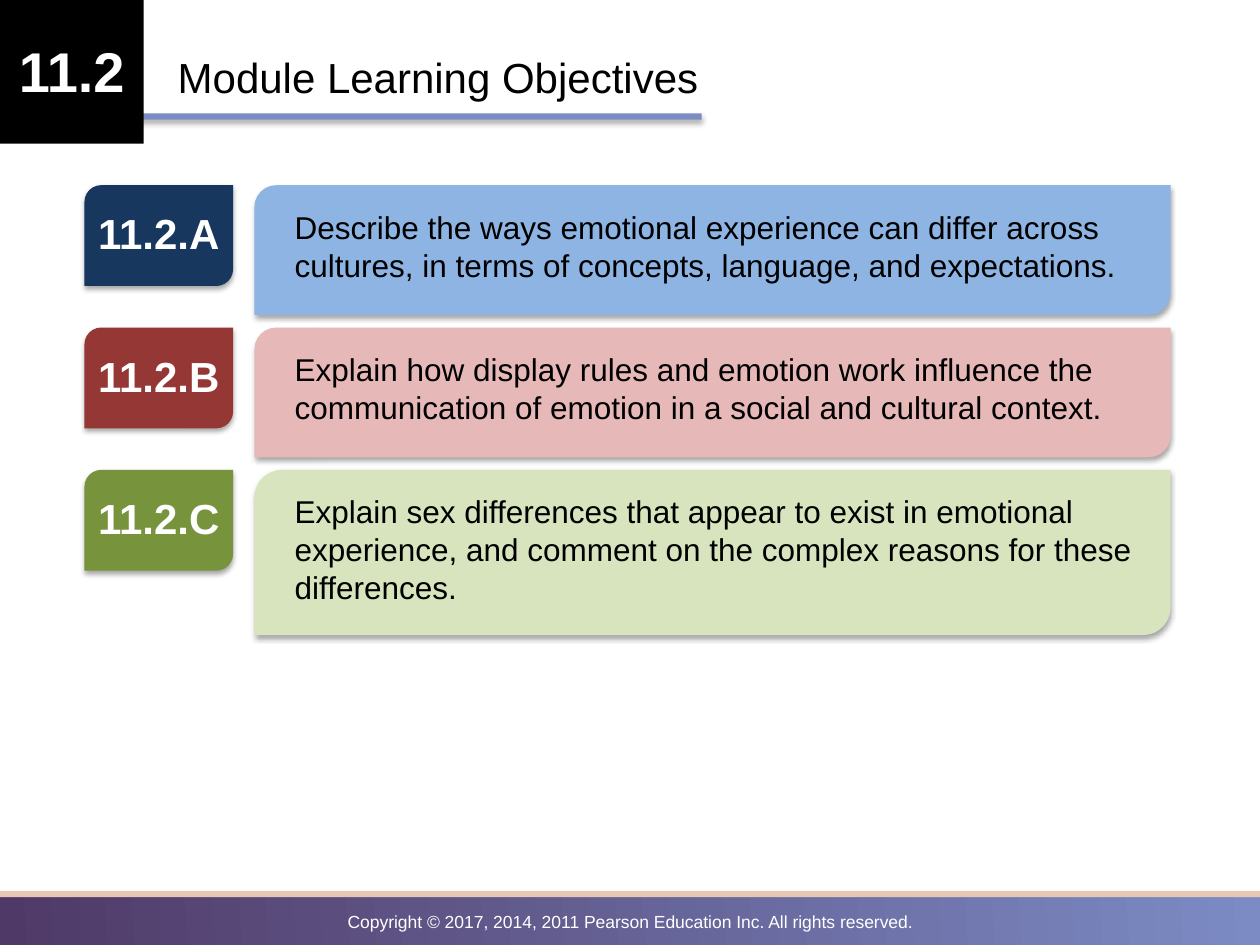
import pptx
import pptx.util
import pptx.dml.color
import pptx.enum.shapes
import pptx.enum.text
import pptx.oxml

Inches = pptx.util.Inches
SHAPE = pptx.enum.shapes.MSO_SHAPE
ALIGN = pptx.enum.text.PP_ALIGN
ANCHOR = pptx.enum.text.MSO_ANCHOR

# Content
MODULE = "11.2"
TITLE = "Module Learning Objectives"
COPYRIGHT = "Copyright © 2017, 2014, 2011 Pearson Education Inc. All rights reserved."
# label, objective, badge colour, card colour, card height
OBJECTIVES = [
    ("11.2.A", "Describe the ways emotional experience can differ across cultures, "
     "in terms of concepts, language, and expectations.", "17375E", "8EB4E3", 1.03),
    ("11.2.B", "Explain how display rules and emotion work influence the "
     "communication of emotion in a social and cultural context.", "953735", "E6B9B8", 1.03),
    ("11.2.C", "Explain sex differences that appear to exist in emotional experience, "
     "and comment on the complex reasons for these differences.", "77933C", "D7E4BD", 1.31),
]

THEME = {
    "font": "Arial",
    "module": 32, "title": 24, "label": 24, "objective": 18, "copyright": 10,
    "dark": "000000", "light": "FFFFFF",
    "accent": "7C8BC4", "footer": "4F3967", "footer_edge": "E7C8B3",
}

# Layout
SLIDE_W, SLIDE_H = 10, 7.5
MODULE_SIDE = 1.14
FIRST_TOP, ROW_GAP, TEXT_DROP = 1.47, 0.1, 0.13
BADGE_LEFT, BADGE_W, BADGE_H = 0.67, 1.18, 0.8
CARD_LEFT, CARD_W = 2.02, 7.27
OBJECTIVE_LEFT, OBJECTIVE_W = 2.24, 6.99
FOOTER_TOP = 7.08

SHADOW = (
    '<a:effectLst xmlns:a="http://schemas.openxmlformats.org/drawingml/2006/main">'
    '<a:outerShdw blurRad="39370" dist="22860" dir="5400000" rotWithShape="0">'
    '<a:srgbClr val="000000"><a:alpha val="35000"/></a:srgbClr>'
    '</a:outerShdw></a:effectLst>'
)


def rgb(value):
    return pptx.dml.color.RGBColor.from_string(value)


def add_block(shapes, kind, box, color, shadow=False):
    block = shapes.add_shape(kind, *map(Inches, box))
    block.fill.solid()
    block.fill.fore_color.rgb = rgb(color)
    block.line.fill.background()
    if shadow:
        block._element.spPr.append(pptx.oxml.parse_xml(SHADOW))
    else:
        block.shadow.inherit = False
    return block


def write(holder, words, role, color, align=ALIGN.LEFT, bold=False):
    frame = holder.text_frame
    frame.word_wrap = True
    frame.vertical_anchor = ANCHOR.TOP
    frame.text = words
    paragraph = frame.paragraphs[0]
    paragraph.alignment = align
    paragraph.font.name = THEME["font"]
    paragraph.font.size = pptx.util.Pt(THEME[role])
    paragraph.font.bold = bold
    paragraph.font.color.rgb = rgb(THEME[color])


def add_words(shapes, box, *args, **kwargs):
    write(shapes.add_textbox(*map(Inches, box)), *args, **kwargs)


def add_footer(shapes):
    strip = add_block(shapes, SHAPE.RECTANGLE,
                      (0, FOOTER_TOP, SLIDE_W, SLIDE_H - FOOTER_TOP), THEME["footer"])
    strip.fill.gradient()
    strip.fill.gradient_angle = 4
    for stop, color in zip(strip.fill.gradient_stops, ("footer", "accent")):
        stop.color.rgb = rgb(THEME[color])
    add_block(shapes, SHAPE.RECTANGLE, (0, 7.07, SLIDE_W, 0.05), THEME["footer_edge"])
    add_words(shapes, (0, 7.18, SLIDE_W, 0.27), COPYRIGHT, "copyright", "light", ALIGN.CENTER)


def add_header(shapes):
    add_block(shapes, SHAPE.RECTANGLE, (0, 0.9, 5.57, 0.05), THEME["accent"], shadow=True)
    module = shapes.add_group_shape().shapes
    add_block(module, SHAPE.RECTANGLE, (0, 0, MODULE_SIDE, MODULE_SIDE), THEME["dark"])
    add_words(module, (0, 0.24, MODULE_SIDE, 0.64), MODULE, "module", "light",
              ALIGN.CENTER, bold=True)
    title = shapes.title
    title.left, title.top, title.width, title.height = map(Inches, (1.31, 0.36, 7.71, 0.5))
    write(title, TITLE, "title", "dark")


def add_objectives(shapes):
    top = FIRST_TOP
    for label, objective, badge_color, card_color, height in OBJECTIVES:
        badge = shapes.add_group_shape().shapes
        add_block(badge, SHAPE.ROUND_2_DIAG_RECTANGLE,
                  (BADGE_LEFT, top, BADGE_W, BADGE_H), badge_color, shadow=True)
        add_words(badge, (BADGE_LEFT, top + TEXT_DROP, BADGE_W, 0.5),
                  label, "label", "light", ALIGN.CENTER, bold=True)
        card = shapes.add_group_shape().shapes
        add_block(card, SHAPE.ROUND_2_DIAG_RECTANGLE,
                  (CARD_LEFT, top, CARD_W, height), card_color, shadow=True)
        add_words(card, (OBJECTIVE_LEFT, top + TEXT_DROP, OBJECTIVE_W, height - 0.31),
                  objective, "objective", "dark")
        top += height + ROW_GAP


def main():
    deck = pptx.Presentation()
    deck.slide_width, deck.slide_height = Inches(SLIDE_W), Inches(SLIDE_H)
    title_only = deck.slide_layouts[5]
    shapes = deck.slides.add_slide(title_only).shapes
    add_footer(shapes)
    add_header(shapes)
    add_objectives(shapes)
    deck.save("out.pptx")


if __name__ == "__main__":
    main()
